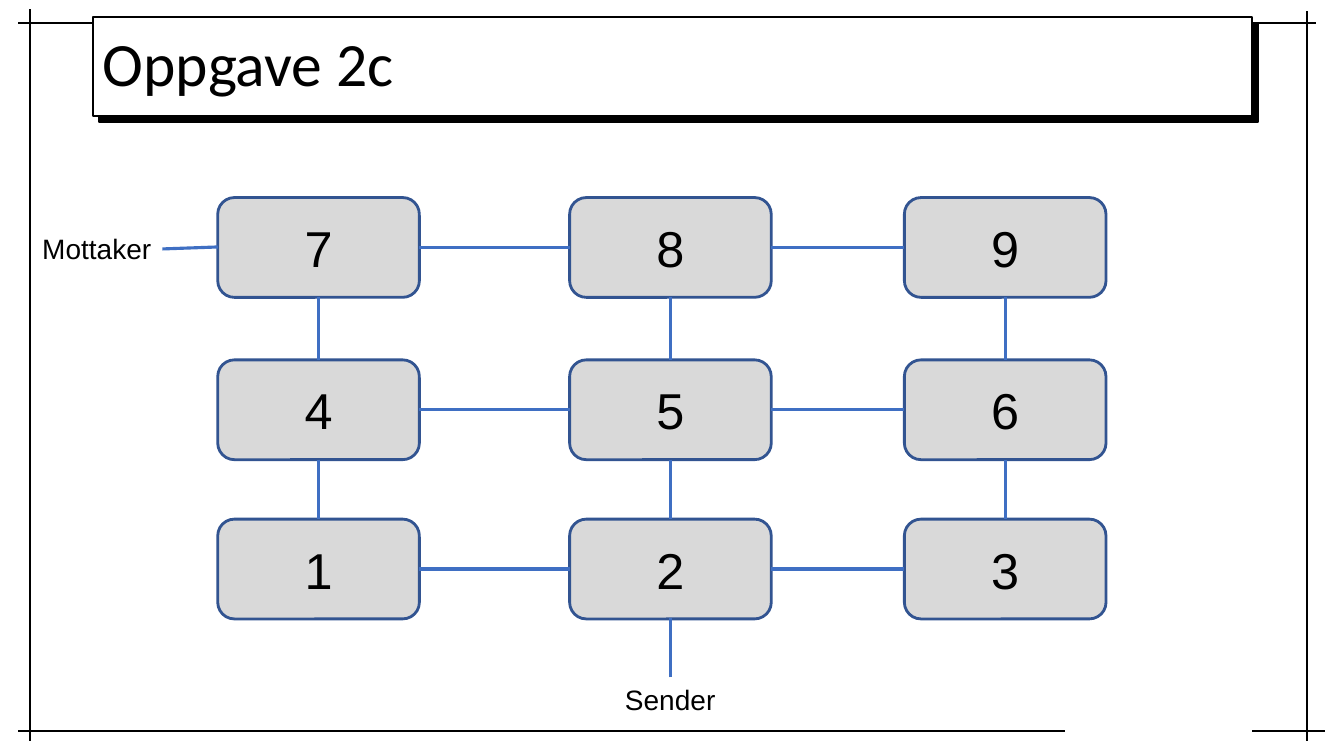
import pptx
import pptx.util
import pptx.dml.color
import pptx.enum.shapes
import pptx.enum.text
import pptx.oxml
import pptx.oxml.ns

Inches = pptx.util.Inches
Pt = pptx.util.Pt
RGBColor = pptx.dml.color.RGBColor
Shape = pptx.enum.shapes.MSO_SHAPE
Align = pptx.enum.text.PP_ALIGN
Anchor = pptx.enum.text.MSO_ANCHOR

BLACK = RGBColor(0x00, 0x00, 0x00)
WHITE = RGBColor(0xFF, 0xFF, 0xFF)
NODE_FILL = RGBColor(0xD9, 0xD9, 0xD9)
NODE_EDGE = RGBColor(0x32, 0x54, 0x91)
LINK_BLUE = RGBColor(0x3F, 0x6F, 0xC3)

NODE_WIDTH, NODE_HEIGHT = 2, 0.99
COLUMN_LEFTS = (2.16, 5.65, 8.97)
ROW_TOPS = (1.96, 3.57, 5.15)
NODE_ROWS = ("789", "456", "123")
FRAME_LINES = (
    (0.18, 0.23, 13.05, 0.23),
    (0.18, 7.25, 10.56, 7.25),
    (0.3, 7.35, 0.3, 0.09),
    (12.96, 7.35, 12.96, 0.11),
    (12.42, 7.25, 13.14, 7.25),
)
TITLE_SHADOW = (
    '<a:outerShdw %s dist="76200" dir="2700000" algn="ctr" rotWithShape="0">'
    '<a:srgbClr val="000000"/></a:outerShdw>' % pptx.oxml.ns.nsdecls("a")
)


def write_text(shape, text, size, font="Arial", align=Align.LEFT,
               anchor=Anchor.TOP, wrap=True, line_spacing=None):
    """Write one formatted paragraph into a shape."""
    frame = shape.text_frame
    frame.word_wrap = wrap
    frame.vertical_anchor = anchor
    para = frame.paragraphs[0]
    para.alignment = align
    para.line_spacing = line_spacing
    span = para.add_run()
    span.text = text
    span.font.size = Pt(size)
    span.font.name = font
    span.font.color.rgb = BLACK


def add_line(page, ends, color, width):
    """Draw a straight line through the ends (x1, y1, x2, y2)."""
    line = page.shapes.add_connector(
        pptx.enum.shapes.MSO_CONNECTOR.STRAIGHT, *map(Inches, ends))
    line.line.color.rgb = color
    line.line.width = Pt(width)
    line._element.spPr.append(
        pptx.oxml.parse_xml("<a:effectLst %s/>" % pptx.oxml.ns.nsdecls("a")))


def add_box(page, kind, box, fill, edge, width):
    """Draw a filled, outlined shape in the box (left, top, width, height)."""
    shape = page.shapes.add_shape(kind, *map(Inches, box))
    shape.shadow.inherit = False
    shape.fill.solid()
    shape.fill.fore_color.rgb = fill
    shape.line.color.rgb = edge
    shape.line.width = Pt(width)
    return shape


def add_title(page, text, box):
    """Draw the title box with its hard shadow."""
    title = add_box(page, Shape.RECTANGLE, box, WHITE, BLACK, 1.5)
    effects = title._element.spPr.find(pptx.oxml.ns.qn("a:effectLst"))
    effects.append(pptx.oxml.parse_xml(TITLE_SHADOW))
    write_text(title, text, 44, font="Calibri", anchor=Anchor.MIDDLE,
               line_spacing=0.9)


def add_network(page):
    """Draw the grid of nodes and the links between neighbours."""
    for row, (top, names) in enumerate(zip(ROW_TOPS, NODE_ROWS)):
        middle = top + NODE_HEIGHT / 2
        for column, (left, name) in enumerate(zip(COLUMN_LEFTS, names)):
            node = add_box(page, Shape.ROUNDED_RECTANGLE,
                           (left, top, NODE_WIDTH, NODE_HEIGHT),
                           NODE_FILL, NODE_EDGE, 2)
            write_text(node, name, 36, align=Align.CENTER,
                       anchor=Anchor.MIDDLE)
            if column:
                start = COLUMN_LEFTS[column - 1] + NODE_WIDTH
                add_line(page, (start, middle, left, middle), LINK_BLUE, 2.25)
            if row:
                center = left + NODE_WIDTH / 2
                start = ROW_TOPS[row - 1] + NODE_HEIGHT
                add_line(page, (center, start, center, top), LINK_BLUE, 2.25)


def add_endpoint(page, text, box, link):
    """Label an end user and link it to the network."""
    label = page.shapes.add_textbox(*map(Inches, box))
    write_text(label, text, 20, wrap=False)
    add_line(page, link, LINK_BLUE, 2.25)


def main():
    """Build the deck and save it."""
    deck = pptx.Presentation()
    deck.slide_width, deck.slide_height = Inches(13.33), Inches(7.5)
    page = deck.slides.add_slide(deck.slide_layouts[6])
    for ends in FRAME_LINES:
        add_line(page, ends, BLACK, 1.5)
    add_title(page, "Oppgave 2c", (0.92, 0.17, 11.5, 0.98))
    add_network(page)
    add_endpoint(page, "Sender", (6.1, 6.72, 1.11, 0.44),
                 (6.65, 6.72, 6.65, 6.13))
    add_endpoint(page, "Mottaker", (0.32, 2.25, 1.29, 0.44),
                 (2.16, 2.45, 1.61, 2.47))
    deck.save("out.pptx")


if __name__ == "__main__":
    main()
